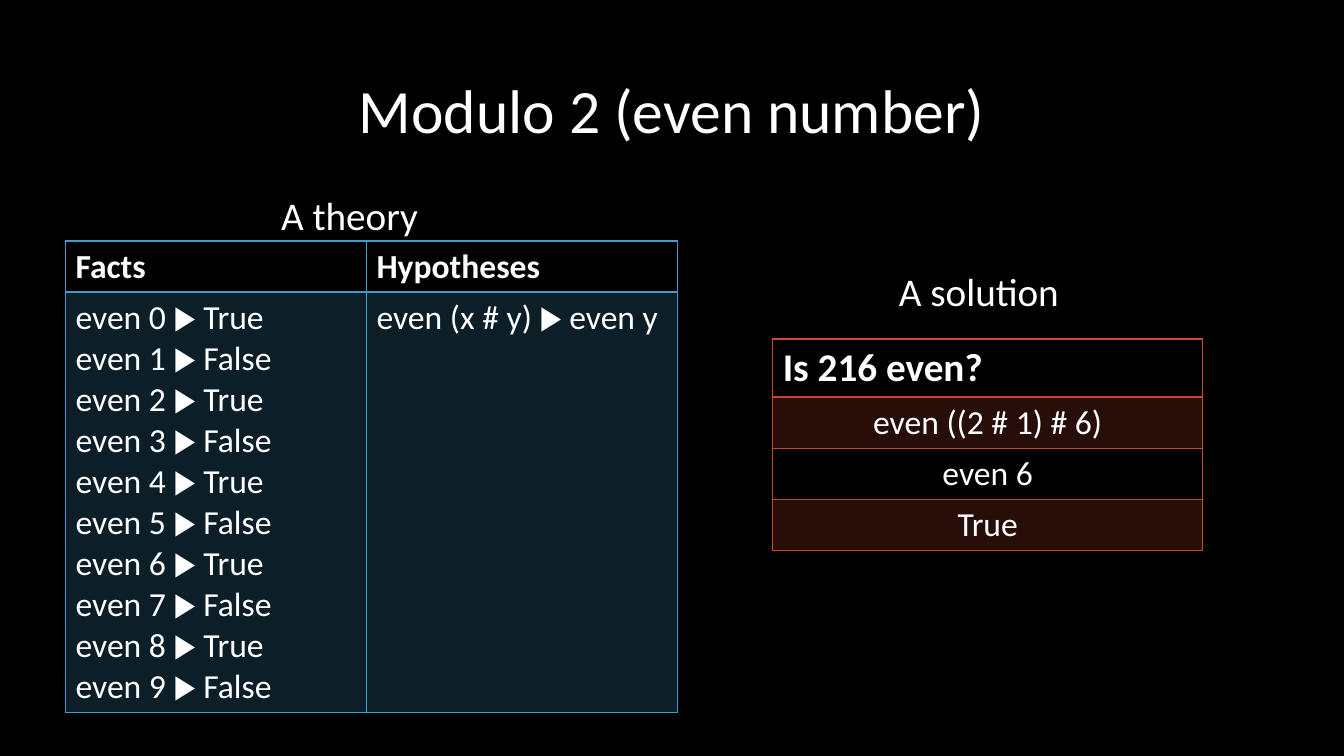
from dataclasses import dataclass
from lxml import etree
from pptx import Presentation
from pptx.dml.color import RGBColor
from pptx.enum.text import MSO_ANCHOR, MSO_AUTO_SIZE, PP_ALIGN
from pptx.oxml.ns import qn
from pptx.util import Pt

CENTER, LEFT = PP_ALIGN.CENTER, PP_ALIGN.LEFT
MIDDLE = MSO_ANCHOR.MIDDLE
GROW = MSO_AUTO_SIZE.SHAPE_TO_FIT_TEXT


@dataclass(frozen=True)
class Theme:
    font: str = "Calibri"
    background: str = "000000"
    text: str = "FFFFFF"
    theory: str = "3D9CCC"
    solution: str = "C9492C"
    tint: int = 20
    title_size: int = 44
    label_size: int = 28
    cell_size: int = 24


THEME = Theme()


def write(tf, lines, size, bold=False, align=LEFT):
    for i, line in enumerate(lines):
        p = tf.paragraphs[0] if i == 0 else tf.add_paragraph()
        p.alignment = align
        r = p.add_run()
        r.text = line
        r.font.name = THEME.font
        r.font.size = Pt(size)
        r.font.bold = bold
        r.font.color.rgb = RGBColor.from_string(THEME.text)


def style_cell(cell, color, tinted, widths):
    """Fill the cell and draw its left, right, top and bottom borders."""
    if tinted:
        cell.fill.solid()
        cell.fill.fore_color.rgb = RGBColor.from_string(color)
    else:
        cell.fill.background()
    tcPr = cell._tc.get_or_add_tcPr()
    for clr in tcPr.iter(qn("a:srgbClr")):
        etree.SubElement(clr, qn("a:alpha"), val=str(THEME.tint * 1000))
    for i, (side, width) in enumerate(zip("LRTB", widths)):
        ln = etree.Element(qn(f"a:ln{side}"), w=str(Pt(width)))
        fill = etree.SubElement(ln, qn("a:solidFill"))
        etree.SubElement(fill, qn("a:srgbClr"), val=color)
        tcPr.insert(i, ln)


prs = Presentation()
prs.slide_width, prs.slide_height = Pt(960), Pt(540)
s = prs.slides.add_slide(prs.slide_layouts[5])
s.background.fill.solid()
s.background.fill.fore_color.rgb = RGBColor.from_string(THEME.background)

# Title
title = s.shapes.title
title.left, title.top, title.width, title.height = Pt(66), Pt(28.8), Pt(828), Pt(104.4)
title.text_frame.vertical_anchor = MIDDLE
write(title.text_frame, ["Modulo 2 (even number)"], THEME.title_size, align=CENTER)
title.text_frame.paragraphs[0].line_spacing = 0.9

# Tables: left, top, column widths, row heights, colour, header size, body alignment, rows
facts = [f"even {n} ▶ {n % 2 == 0}" for n in range(10)]
tables = [
    (46.8, 172.2, [215, 222], [36.4, 300], THEME.theory, THEME.cell_size, LEFT,
     [[["Facts"], ["Hypotheses"]], [facts, ["even (x # y) ▶ even y"]]]),
    (552, 242.2, [307], [41.2, 36.4, 36.4, 36.4], THEME.solution, THEME.label_size, CENTER,
     [[["Is 216 even?"]], [["even ((2 # 1) # 6)"]], [["even 6"]], [["True"]]]),
]
for left, top, col_widths, row_heights, color, header_size, align, rows in tables:
    table = s.shapes.add_table(len(rows), len(col_widths), Pt(left), Pt(top),
                               Pt(sum(col_widths)), Pt(sum(row_heights))).table
    table.first_row = table.horz_banding = False
    for col, width in zip(table.columns, col_widths):
        col.width = Pt(width)
    for i, row in enumerate(rows):
        table.rows[i].height = Pt(row_heights[i])
        header = i == 0
        for j, lines in enumerate(row):
            cell = table.cell(i, j)
            # The rule under the header is twice as heavy
            style_cell(cell, color, i % 2 == 1,
                       (1, 1, 2 if i == 1 else 1, 2 if header else 1))
            write(cell.text_frame, lines, header_size if header else THEME.cell_size,
                  bold=header, align=LEFT if header else align)

# Table labels
for label, left, top, width in [("A solution", 635, 187.2, 148.3),
                                ("A theory", 193.7, 133.2, 131)]:
    tf = s.shapes.add_textbox(Pt(left), Pt(top), Pt(width), Pt(41)).text_frame
    tf.word_wrap = False
    tf.auto_size = GROW
    write(tf, [label], THEME.label_size)

prs.save("out.pptx")
